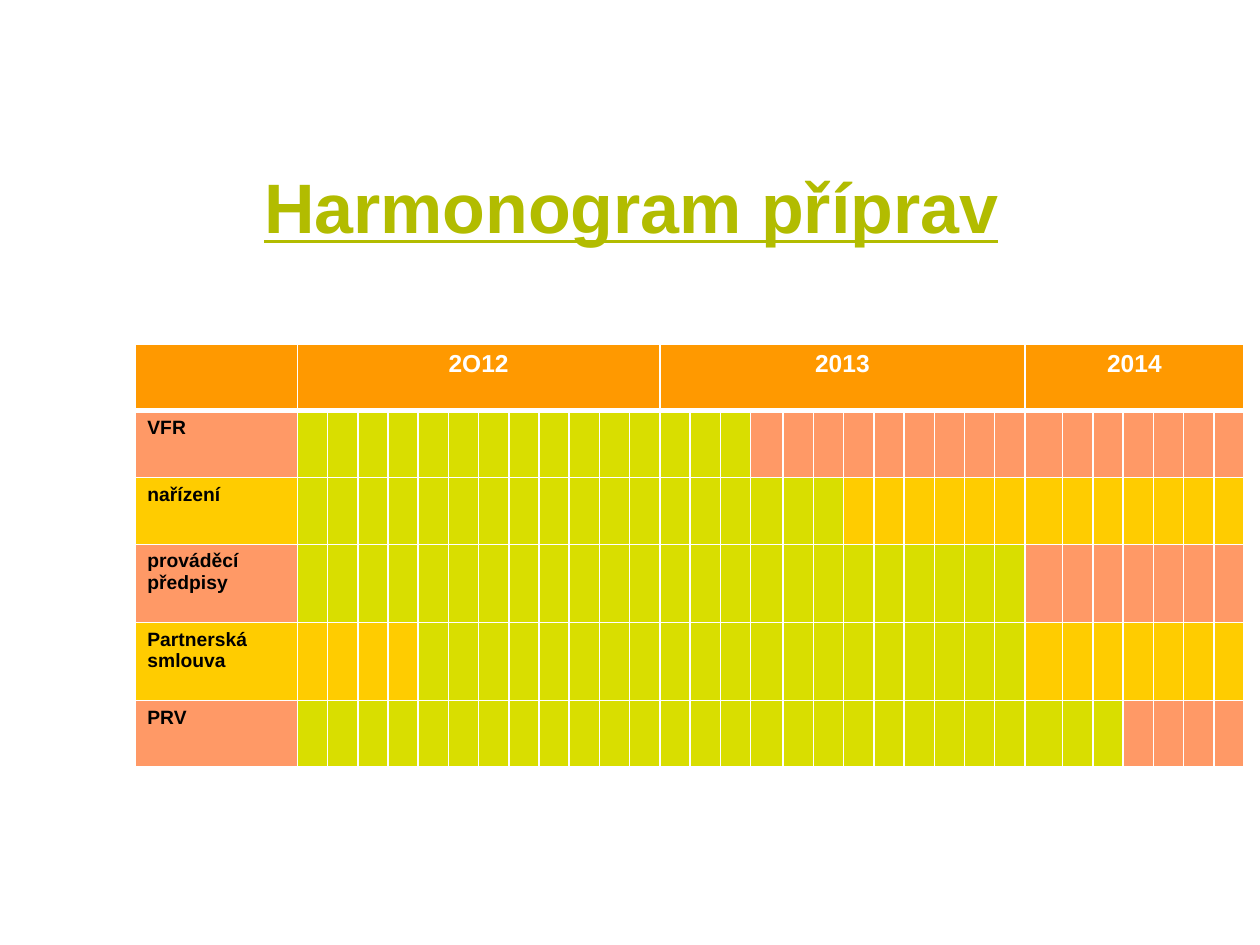
import pptx
import pptx.dml.color
import pptx.enum.text
import pptx.oxml.ns
import pptx.util
import lxml.etree

WHITE = pptx.dml.color.RGBColor(0xFF, 0xFF, 0xFF)
BLACK = pptx.dml.color.RGBColor(0x00, 0x00, 0x00)
OLIVE = pptx.dml.color.RGBColor(0xB2, 0xBC, 0x00)
ORANGE = pptx.dml.color.RGBColor(0xFF, 0x99, 0x00)
SALMON = pptx.dml.color.RGBColor(0xFF, 0x99, 0x66)
YELLOW = pptx.dml.color.RGBColor(0xFF, 0xCC, 0x00)
LIME = pptx.dml.color.RGBColor(0xD9, 0xDE, 0x00)
CENTER = pptx.enum.text.PP_ALIGN.CENTER

YEARS = [("2O12", 12), ("2013", 12), ("2014", 7)]
TASKS = [
    (["VFR"], 1, 15, 0.53),
    (["nařízení"], 1, 18, 0.53),
    (["prováděcí předpisy"], 1, 24, 0.62),
    (["Partnerská", "smlouva"], 5, 24, 0.62),
    (["PRV"], 1, 27, 0.53),
]
MONTHS = sum(count for name, count in YEARS)
LABEL_WIDTH = 1.29
MONTH_WIDTH = 0.24
WIDE_MONTHS = {16: 0.26, 25: 0.3}
HEADER_HEIGHT = 0.53


def add_span(para, text, size, color):
    span = para.add_run()
    span.text = text
    span.font.name = "Arial"
    span.font.size = pptx.util.Pt(size)
    span.font.bold = True
    span.font.color.rgb = color
    return span


def paint_cell(cell, color, bottom_width):
    properties = cell._tc.get_or_add_tcPr()
    for side, width in (("L", 1), ("R", 1), ("T", 1), ("B", bottom_width)):
        line = lxml.etree.SubElement(properties, pptx.oxml.ns.qn(f"a:ln{side}"), w=str(pptx.util.Pt(width)))
        fill = lxml.etree.SubElement(line, pptx.oxml.ns.qn("a:solidFill"))
        lxml.etree.SubElement(fill, pptx.oxml.ns.qn("a:srgbClr"), val=str(WHITE))
    cell.fill.solid()
    cell.fill.fore_color.rgb = color


deck = pptx.Presentation()
deck.slide_width = pptx.util.Inches(10)
deck.slide_height = pptx.util.Inches(7.5)
page = deck.slides.add_slide(deck.slide_layouts[5])

title = page.shapes.title
title.left, title.top = pptx.util.Inches(0.51), pptx.util.Inches(1.01)
title.width, title.height = pptx.util.Inches(9), pptx.util.Inches(1.25)
title.text_frame.vertical_anchor = pptx.enum.text.MSO_ANCHOR.MIDDLE
heading = title.text_frame.paragraphs[0]
heading.alignment = CENTER
add_span(heading, "Harmonogram příprav", 40, OLIVE).font.underline = True

widths = [LABEL_WIDTH] + [WIDE_MONTHS.get(month, MONTH_WIDTH) for month in range(1, MONTHS + 1)]
heights = [HEADER_HEIGHT] + [height for names, start, end, height in TASKS]
frame = page.shapes.add_table(
    len(heights), len(widths), pptx.util.Inches(1.07), pptx.util.Inches(2.73),
    pptx.util.Inches(sum(widths)), pptx.util.Inches(sum(heights)))
schedule = frame.table
schedule.horz_banding = False
for column, width in zip(schedule.columns, widths):
    column.width = pptx.util.Inches(width)
for row, height in zip(schedule.rows, heights):
    row.height = pptx.util.Inches(height)

for column in range(len(widths)):
    paint_cell(schedule.cell(0, column), ORANGE, 3)
first = 1
for year, count in YEARS:
    cell = schedule.cell(0, first)
    cell.merge(schedule.cell(0, first + count - 1))
    para = cell.text_frame.paragraphs[0]
    para.alignment = CENTER
    add_span(para, year, 14, WHITE)
    first += count

for row, (names, start, end, height) in enumerate(TASKS, 1):
    base = SALMON if row % 2 else YELLOW
    for column in range(len(widths)):
        paint_cell(schedule.cell(row, column), LIME if start <= column <= end else base, 1)
    label = schedule.cell(row, 0).text_frame
    for index, name in enumerate(names):
        para = label.add_paragraph() if index else label.paragraphs[0]
        add_span(para, name, 11, BLACK)

deck.save("out.pptx")
